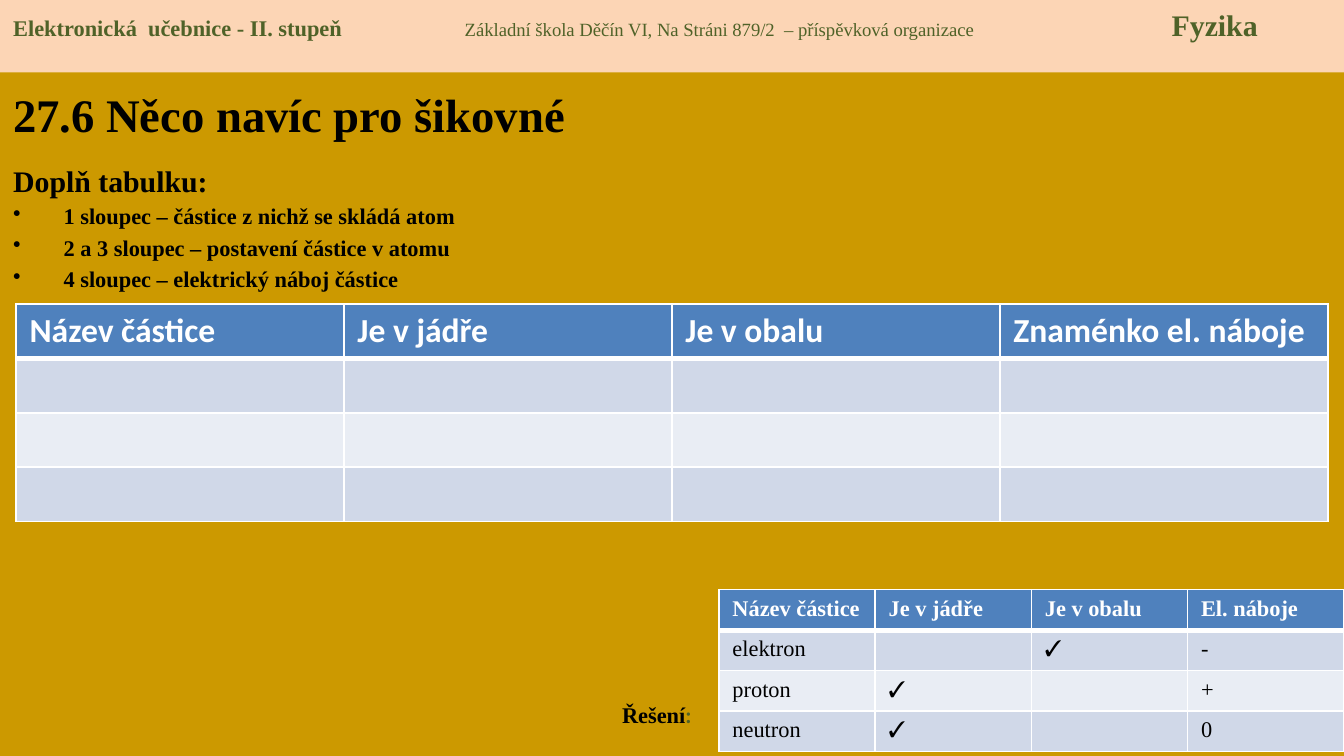
from dataclasses import dataclass

from lxml.etree import SubElement
from pptx import Presentation
from pptx.dml.color import RGBColor
from pptx.enum.shapes import MSO_SHAPE as Preset
from pptx.enum.text import MSO_ANCHOR as Anchor, PP_ALIGN as Align
from pptx.oxml.ns import qn
from pptx.util import Inches, Pt

SLIDE_WIDTH, SLIDE_HEIGHT = Inches(10), Inches(5.625)
SERIF, SANS = "Times New Roman", "Calibri"
BLACK, WHITE, GREEN = "000000", "FFFFFF", "4F6228"
OCHRE, PEACH, BLUE = "CC9900", "FCD5B5", "4F81BD"
BANDS = ("D0D8E8", "E9EDF4")


@dataclass(frozen=True)
class Box:
    """Position and size in percent of the slide."""
    left: float
    top: float
    width: float
    height: float

    def lengths(self) -> tuple:
        return (across(self.left), down(self.top), across(self.width), down(self.height))


@dataclass(frozen=True)
class Style:
    size: float
    color: str = BLACK
    bold: bool = True
    name: str = SERIF


@dataclass(frozen=True)
class Grid:
    box: Box
    header: Style
    body: Style
    rows: tuple


def across(percent: float) -> int:
    return round(SLIDE_WIDTH * percent / 100)


def down(percent: float) -> int:
    return round(SLIDE_HEIGHT * percent / 100)


def color(value: str) -> RGBColor:
    return RGBColor.from_string(value)


def paint(fill, value: str) -> None:
    fill.solid()
    fill.fore_color.rgb = color(value)


def set_font(font, style: Style) -> None:
    font.size, font.bold, font.name = Pt(style.size), style.bold, style.name
    font.color.rgb = color(style.color)


def add_runs(paragraph, pieces: tuple) -> None:
    for text, style in pieces:
        run = paragraph.add_run()
        run.text = text
        set_font(run.font, style)


def add_text_box(slide, box: Box, wrap: bool = True):
    frame = slide.shapes.add_textbox(*box.lengths()).text_frame
    frame.word_wrap = wrap
    return frame


def add_title(slide, box: Box, text: str) -> None:
    frame = add_text_box(slide, box)
    frame.vertical_anchor = Anchor.MIDDLE
    frame.text = text
    set_font(frame.paragraphs[0].font, Style(25))


def add_task(slide, box: Box, heading: str, items: tuple) -> None:
    frame = add_text_box(slide, box)
    frame.text = heading
    set_font(frame.paragraphs[0].font, Style(16))
    for item in items:
        paragraph = frame.add_paragraph()
        paragraph.text = item
        paragraph.space_before = Pt(2.4)
        properties = paragraph._p.get_or_add_pPr()
        properties.set("marL", str(across(3.75)))
        properties.set("indent", str(-across(3.75)))
        SubElement(properties, qn("a:buChar")).set("char", "•")
        set_font(paragraph.font, Style(12))


def add_banner(slide, box: Box, pieces: tuple, stops: tuple) -> None:
    banner = slide.shapes.add_shape(Preset.RECTANGLE, *box.lengths())
    banner.shadow.inherit = False
    paint(banner.fill, PEACH)
    banner.line.fill.background()
    frame = banner.text_frame
    frame.word_wrap = True
    frame.vertical_anchor = Anchor.TOP
    paragraph = frame.paragraphs[0]
    paragraph.alignment = Align.LEFT
    tabs = SubElement(paragraph._p.get_or_add_pPr(), qn("a:tabLst"))
    for stop in stops:
        tab = SubElement(tabs, qn("a:tab"))
        tab.set("pos", str(across(stop)))
        tab.set("algn", "l")
    add_runs(paragraph, pieces)


def add_borders(cell, top: float, bottom: float) -> None:
    properties = cell._tc.get_or_add_tcPr()
    for side, width in (("L", 1), ("R", 1), ("T", top), ("B", bottom)):
        line = SubElement(properties, qn(f"a:ln{side}"))
        line.set("w", str(Pt(width)))
        SubElement(SubElement(line, qn("a:solidFill")), qn("a:srgbClr")).set("val", WHITE)


def add_grid(slide, grid: Grid) -> None:
    row_count, column_count = len(grid.rows), len(grid.rows[0])
    table = slide.shapes.add_table(row_count, column_count, *grid.box.lengths()).table
    for row_index, texts in enumerate(grid.rows):
        is_header = row_index == 0
        style = grid.header if is_header else grid.body
        for column_index, text in enumerate(texts):
            cell = table.cell(row_index, column_index)
            add_borders(cell, 3 if row_index == 1 else 1, 3 if is_header else 1)
            paint(cell.fill, BLUE if is_header else BANDS[(row_index - 1) % 2])
            paragraph = cell.text_frame.paragraphs[0]
            paragraph.text = text
            set_font(paragraph.font, style)
            if not text:
                ending = SubElement(paragraph._p, qn("a:endParaRPr"))
                ending.set("sz", str(style.size * 100))


def main() -> None:
    presentation = Presentation()
    presentation.slide_width, presentation.slide_height = SLIDE_WIDTH, SLIDE_HEIGHT
    slide = presentation.slides.add_slide(presentation.slide_layouts[6])
    paint(slide.background.fill, OCHRE)

    add_title(slide, Box(0, 9.6, 90, 11), "27.6 Něco navíc pro šikovné")
    add_task(slide, Box(0, 20.6, 100, 68.8), "Doplň tabulku:", (
        "1 sloupec – částice z nichž se skládá atom",
        "2 a 3 sloupec – postavení částice v atomu",
        "4 sloupec – elektrický náboj částice",
    ))
    add_banner(slide, Box(0, 0, 100, 9.6), (
        ("Elektronická  učebnice - II. stupeň\t", Style(12, GREEN)),
        ("Základní škola Děčín VI, Na Stráni 879/2  – příspěvková organizace\t",
         Style(10, GREEN, False)),
        ("Fyzika", Style(16, GREEN)),
    ), (33.6, 86.2))

    columns = ("Název částice", "Je v jádře", "Je v obalu")
    add_grid(slide, Grid(
        Box(1.2, 40.2, 97.6, 28.8),
        Style(18, WHITE, name=SANS), Style(18, bold=False, name=SANS),
        ((*columns, "Znaménko el. náboje"), *[("",) * 4] * 3),
    ))
    add_grid(slide, Grid(
        Box(53.5, 78, 46.5, 21.4),
        Style(12, WHITE), Style(12, bold=False),
        (
            (*columns, "El. náboje"),
            ("elektron", "", "✓", "-"),
            ("proton", "✓", "", "+"),
            ("neutron", "✓", "", "0"),
        ),
    ))
    label = add_text_box(slide, Box(45.3, 91.9, 7.2, 5.4), wrap=False)
    add_runs(label.paragraphs[0], (
        ("Řešení", Style(12)), (":", Style(12, GREEN, name=SANS)),
    ))
    presentation.save("out.pptx")


if __name__ == "__main__":
    main()
